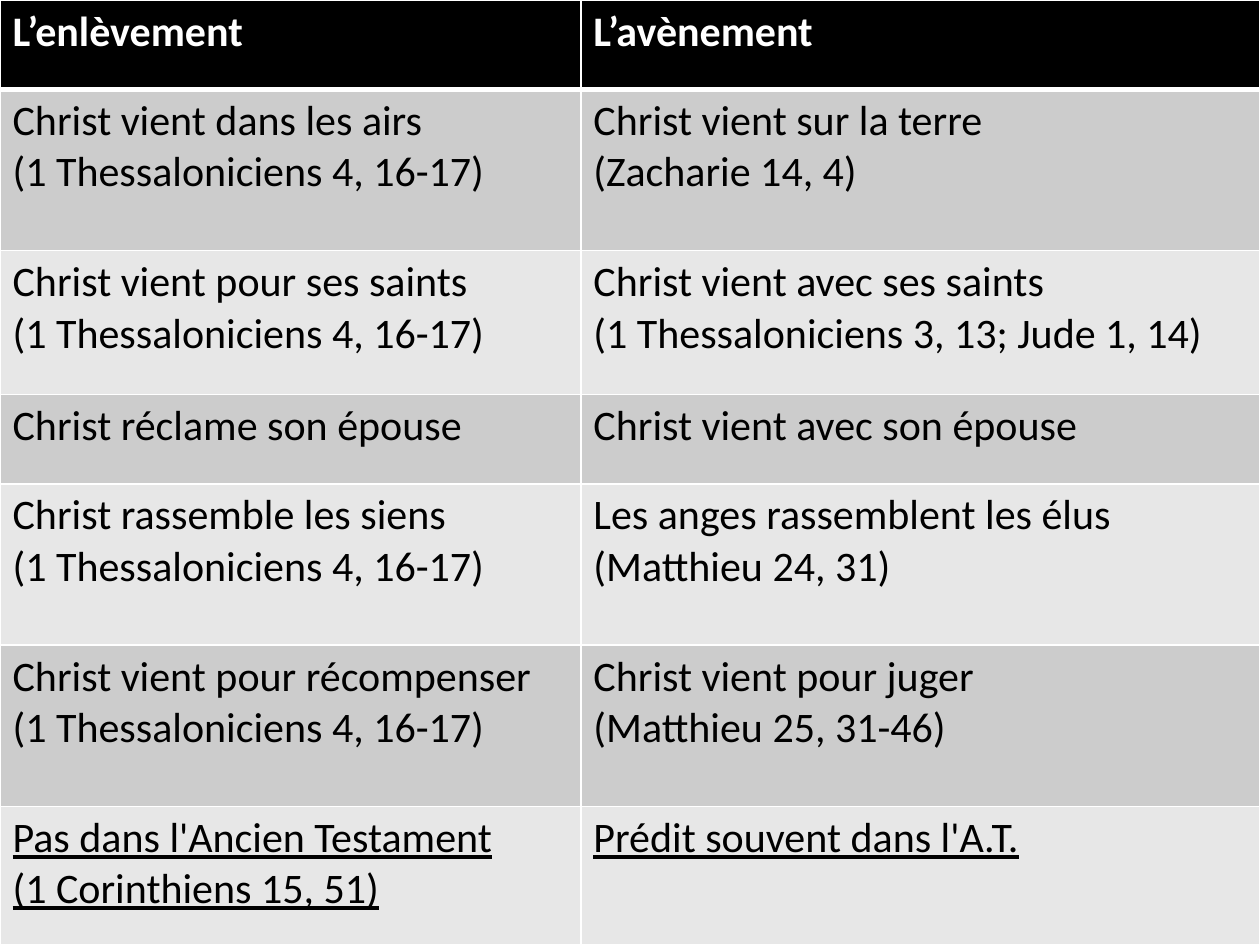
from lxml import etree
from pptx import Presentation
from pptx.dml.color import RGBColor
from pptx.oxml.ns import qn
from pptx.util import Pt

PX = 9144  # EMU in one px, 100 px to the inch
PAGE_WIDTH, PAGE_HEIGHT = 1000, 750
BLANK_LAYOUT = 6

BLACK = RGBColor(0x00, 0x00, 0x00)
WHITE = RGBColor(0xFF, 0xFF, 0xFF)
DARK_BAND = RGBColor(0xCC, 0xCC, 0xCC)
LIGHT_BAND = RGBColor(0xE7, 0xE7, 0xE7)

FONT = "Calibri"
TEXT_SIZE = 24
THIN, THICK = 1, 3  # border widths in points

COLUMN_WIDTHS = [461, 539]
ROW_HEIGHTS = [71, 128, 114, 71, 128, 128, 110]
RAPTURE_VERSE = "(1 Thessaloniciens 4, 16-17)"

# One row per comparison, one list of lines per cell
ROWS = [
    (["L’enlèvement"], ["L’avènement"]),
    (["Christ vient dans les airs", RAPTURE_VERSE],
     ["Christ vient sur la terre", "(Zacharie 14, 4)"]),
    (["Christ vient pour ses saints", RAPTURE_VERSE],
     ["Christ vient avec ses saints", "(1 Thessaloniciens 3, 13; Jude 1, 14)"]),
    (["Christ réclame son épouse"], ["Christ vient avec son épouse"]),
    (["Christ rassemble les siens", RAPTURE_VERSE],
     ["Les anges rassemblent les élus", "(Matthieu 24, 31)"]),
    (["Christ vient pour récompenser", RAPTURE_VERSE],
     ["Christ vient pour juger", "(Matthieu 25, 31-46)"]),
    (["Pas dans l'Ancien Testament", "(1 Corinthiens 15, 51)"],
     ["Prédit souvent dans l'A.T."]),
]


def set_borders(cell, top, bottom):
    """Draw white borders; the side lines are always thin."""
    properties = cell._tc.get_or_add_tcPr()
    widths = {"a:lnL": THIN, "a:lnR": THIN, "a:lnT": top, "a:lnB": bottom}
    for position, (tag, width) in enumerate(widths.items()):
        line = etree.Element(qn(tag), w=str(Pt(width)))
        fill = etree.SubElement(line, qn("a:solidFill"))
        etree.SubElement(fill, qn("a:srgbClr"), val=str(WHITE))
        properties.insert(position, line)


def write_lines(cell, lines, color, bold, underline):
    frame = cell.text_frame
    for index, line in enumerate(lines):
        para = frame.add_paragraph() if index else frame.paragraphs[0]
        span = para.add_run()
        span.text = line
        font = span.font
        font.name, font.size = FONT, Pt(TEXT_SIZE)
        font.bold, font.underline = bold, underline
        font.color.rgb = color


def add_comparison_table(page, left, top, width, height):
    table = page.shapes.add_table(
        len(ROWS), len(COLUMN_WIDTHS),
        left * PX, top * PX, width * PX, height * PX).table
    for column, column_width in zip(table.columns, COLUMN_WIDTHS):
        column.width = column_width * PX
    for row, row_height in zip(table.rows, ROW_HEIGHTS):
        row.height = row_height * PX

    for row_index, texts in enumerate(ROWS):
        header = row_index == 0
        last = row_index == len(ROWS) - 1
        band = DARK_BAND if row_index % 2 else LIGHT_BAND
        for column_index, lines in enumerate(texts):
            cell = table.cell(row_index, column_index)
            cell.fill.solid()
            cell.fill.fore_color.rgb = BLACK if header else band
            set_borders(cell, top=THICK if row_index == 1 else THIN,
                        bottom=THICK if header else THIN)
            write_lines(cell, lines, WHITE if header else BLACK,
                        bold=header, underline=last)


def main():
    deck = Presentation()
    deck.slide_width, deck.slide_height = PAGE_WIDTH * PX, PAGE_HEIGHT * PX
    page = deck.slides.add_slide(deck.slide_layouts[BLANK_LAYOUT])
    add_comparison_table(page, 0, 0, PAGE_WIDTH, PAGE_HEIGHT)
    deck.save("out.pptx")


if __name__ == "__main__":
    main()
